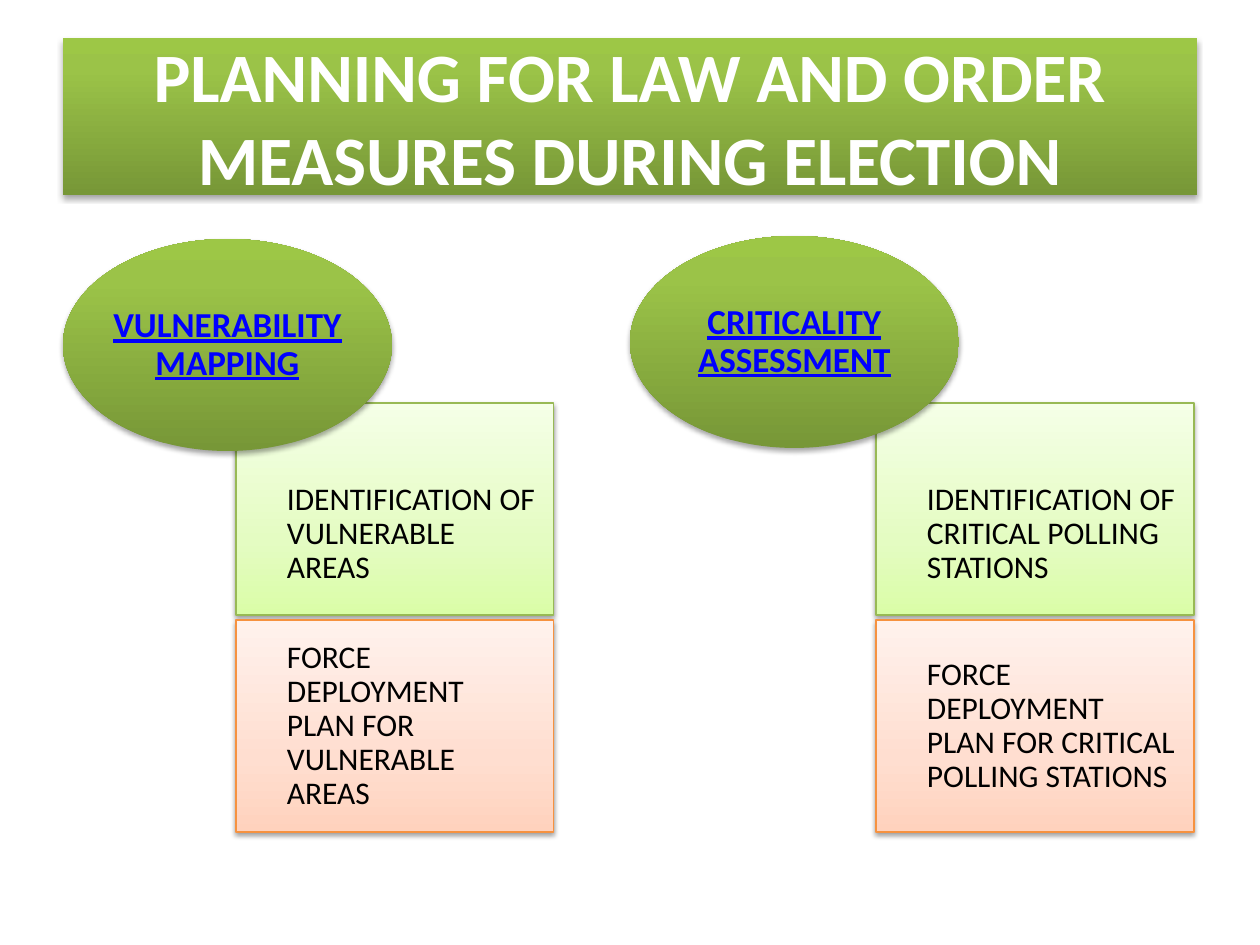
import dataclasses

import lxml.etree
import pptx
import pptx.dml.color
import pptx.enum.shapes
import pptx.enum.text
import pptx.oxml.ns
import pptx.shapes.autoshape
import pptx.util

RGB = pptx.dml.color.RGBColor
KIND = pptx.enum.shapes.MSO_SHAPE
ALIGN = pptx.enum.text.PP_ALIGN
MIDDLE = pptx.enum.text.MSO_ANCHOR.MIDDLE
qn = pptx.oxml.ns.qn
Shape = pptx.shapes.autoshape.Shape

WHITE = RGB(0xFF, 0xFF, 0xFF)
BLACK = RGB(0x00, 0x00, 0x00)
BLUE = RGB(0x00, 0x00, 0xFF)
GREEN_LINE = RGB(0x98, 0xB9, 0x55)
ORANGE_LINE = RGB(0xF6, 0x92, 0x40)

# Stops run from the bottom up, as (percent, colour).
Stops = tuple[tuple[int, RGB], ...]
OLIVE: Stops = ((0, RGB(0x77, 0x97, 0x37)), (80, RGB(0x9B, 0xC3, 0x48)),
                (100, RGB(0x9D, 0xC7, 0x46)))
LIME: Stops = ((0, RGB(0xDA, 0xFD, 0xA7)), (35, RGB(0xE4, 0xFC, 0xC2)),
               (100, RGB(0xF5, 0xFF, 0xE7)))
PEACH: Stops = ((0, RGB(0xFF, 0xD2, 0xBD)), (35, RGB(0xFF, 0xDE, 0xD0)),
                (100, RGB(0xFF, 0xF2, 0xED)))

FONT = "Calibri"
SCALE = 914400 / 126  # EMU in one px
CARD_W, CARD_H = 318, 212
CARD_TOP, CARD_STEP = 403, 217
OVAL_W = 329
PAD, INDENT, DROP = 18, 51, 50


@dataclasses.dataclass(frozen=True)
class Topic:
    head: str
    oval_x: int
    oval_y: int
    card_x: int
    areas: str
    forces: str


TOPICS = (
    Topic("VULNERABILITY MAPPING", 63, 239, 236,
          "IDENTIFICATION OF VULNERABLE AREAS",
          "FORCE DEPLOYMENT PLAN FOR VULNERABLE AREAS"),
    Topic("CRITICALITY ASSESSMENT", 630, 236, 876,
          "IDENTIFICATION OF CRITICAL POLLING STATIONS",
          "FORCE DEPLOYMENT PLAN FOR CRITICAL POLLING STATIONS"),
)


def px(size: int) -> pptx.util.Emu:
    return pptx.util.Emu(round(size * SCALE))


def shade(shape: Shape, stops: Stops) -> None:
    """Fill with a vertical gradient."""
    shape.fill.gradient()
    shape.fill.gradient_angle = 90
    ramp = shape._element.spPr.find(".//" + qn("a:gsLst"))
    for old in list(ramp):
        ramp.remove(old)
    for place, tint in stops:
        stop = lxml.etree.SubElement(ramp, qn("a:gs"), pos=str(place * 1000))
        lxml.etree.SubElement(stop, qn("a:srgbClr"), val=str(tint))


def cast(shape: Shape, dist: float, alpha: int) -> None:
    """Add a soft shadow below the shape."""
    shape.shadow.inherit = False
    effects = shape._element.spPr.find(qn("a:effectLst"))
    outer = lxml.etree.SubElement(
        effects, qn("a:outerShdw"), blurRad=str(pptx.util.Pt(3.1)),
        dist=str(pptx.util.Pt(dist)), dir="5400000", rotWithShape="0")
    tint = lxml.etree.SubElement(outer, qn("a:srgbClr"), val=str(BLACK))
    lxml.etree.SubElement(tint, qn("a:alpha"), val=str(alpha * 1000))


def write(shape: Shape, text: str, size: float, tint: RGB, align: ALIGN,
          bold: bool = False, line: bool = False) -> None:
    frame = shape.text_frame
    frame.text = text
    frame.word_wrap = True
    frame.vertical_anchor = MIDDLE
    para = frame.paragraphs[0]
    para.alignment = align
    para.font.name = FONT
    para.font.size = pptx.util.Pt(size)
    para.font.bold = bold
    para.font.underline = line
    para.font.color.rgb = tint


def inset(shape: Shape, left: int, top: int, right: int, base: int) -> None:
    frame = shape.text_frame
    frame.margin_left, frame.margin_top = px(left), px(top)
    frame.margin_right, frame.margin_bottom = px(right), px(base)
    frame.paragraphs[0].line_spacing = 0.9


def add_title(slide: pptx.slide.Slide) -> None:
    title = slide.shapes.title
    title.left, title.top = px(63), px(38)
    title.width, title.height = px(1134), px(157)
    shade(title, OLIVE)
    cast(title, 1.8, 35)
    write(title, "PLANNING FOR LAW AND ORDER MEASURES DURING ELECTION",
          39.6, WHITE, ALIGN.CENTER, bold=True)


def add_card(slide: pptx.slide.Slide, left: int, row: int, text: str,
             stops: Stops, edge: RGB, drop: int = 0) -> None:
    """Draw a box; drop is extra room above its text."""
    card = slide.shapes.add_shape(
        KIND.RECTANGLE, px(left), px(CARD_TOP + row * CARD_STEP),
        px(CARD_W), px(CARD_H))
    shade(card, stops)
    card.line.color.rgb = edge
    card.line.width = pptx.util.Pt(0.75)
    cast(card, 1.6, 38)
    write(card, text, 18, BLACK, ALIGN.LEFT)
    inset(card, INDENT, PAD + drop, PAD - 2, PAD)


def add_oval(slide: pptx.slide.Slide, topic: Topic) -> None:
    oval = slide.shapes.add_shape(
        KIND.OVAL, px(topic.oval_x), px(topic.oval_y), px(OVAL_W), px(CARD_H))
    shade(oval, OLIVE)
    oval.line.fill.background()
    cast(oval, 1.8, 35)
    write(oval, topic.head, 20, BLUE, ALIGN.CENTER, bold=True, line=True)
    inset(oval, 0, 0, 0, 0)


def main() -> None:
    deck = pptx.Presentation()
    deck.slide_width, deck.slide_height = px(1260), px(945)
    slide = deck.slides.add_slide(deck.slide_layouts[5])
    add_title(slide)
    for topic in TOPICS:
        add_card(slide, topic.card_x, 0, topic.areas, LIME, GREEN_LINE, DROP)
        add_card(slide, topic.card_x, 1, topic.forces, PEACH, ORANGE_LINE)
        add_oval(slide, topic)
    deck.save("out.pptx")


if __name__ == "__main__":
    main()
